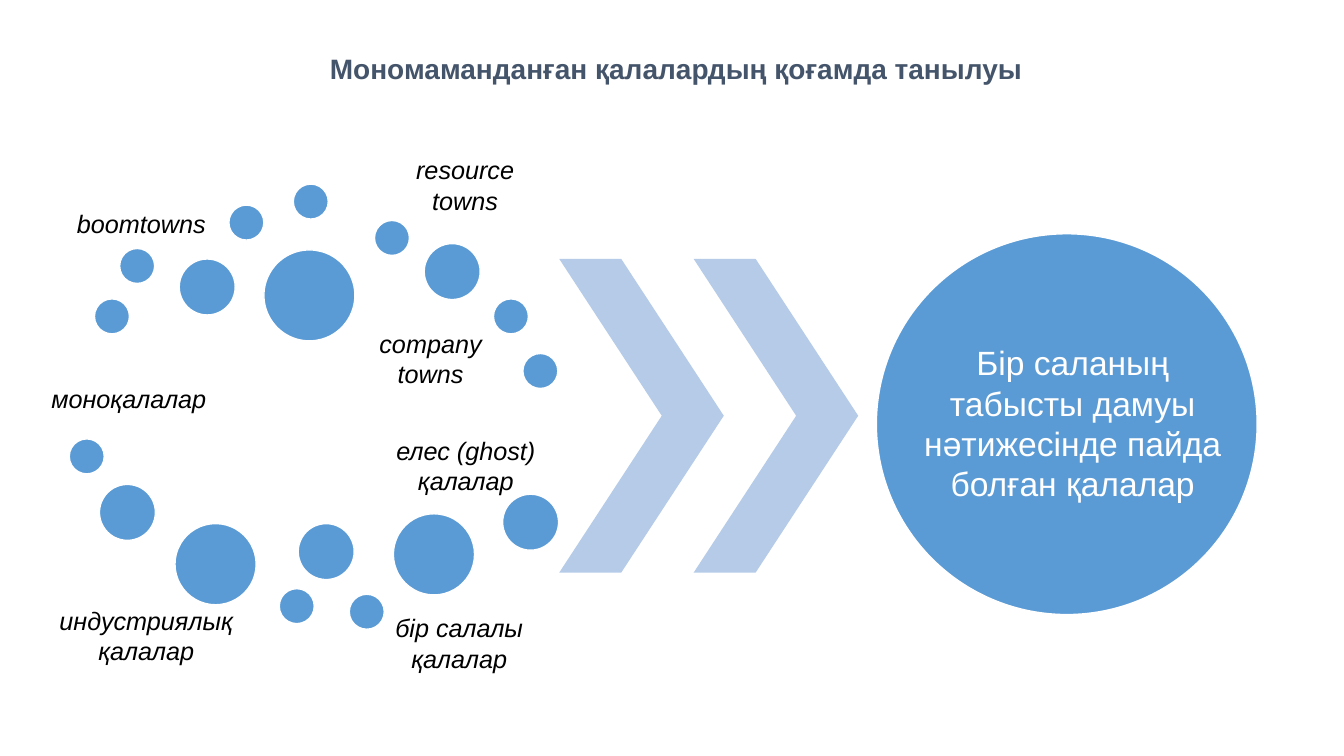
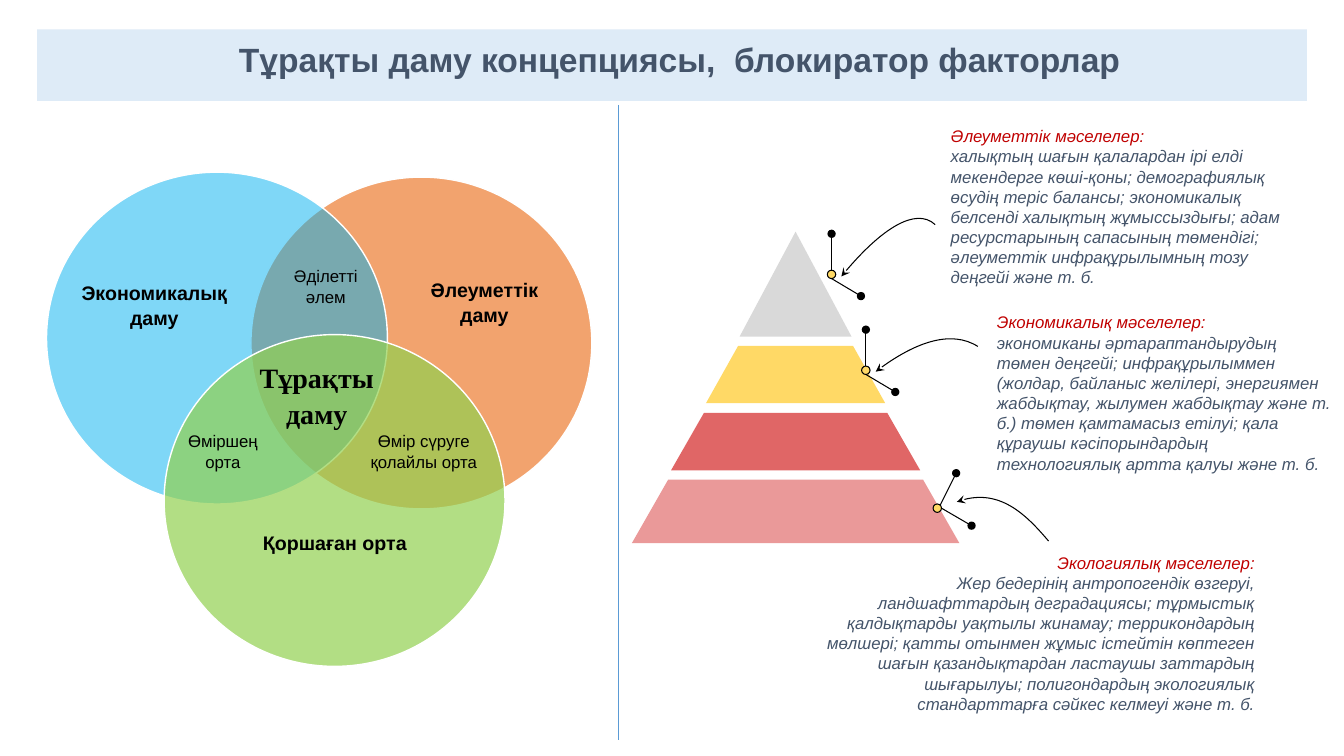
from lxml.etree import SubElement
from pptx import Presentation
from pptx.dml.color import RGBColor
from pptx.enum.shapes import MSO_CONNECTOR, MSO_SHAPE
from pptx.enum.text import MSO_ANCHOR, MSO_AUTO_SIZE, PP_ALIGN
from pptx.oxml.ns import qn
from pptx.util import Pt

COLORS = {
    "heading": "44546A", "band": "DEEBF7", "blue": "5B9BD5", "chevron": "B5CBE7",
    "white": "FFFFFF", "black": "000000", "issue": "C00000",
    "economy": "00B0F0", "society": "ED7D31", "nature": "92D050",
    "peak": "D9D9D9", "yellow": "FFD966", "red": "E06666", "pink": "EA9999",
}
TITLE_ONLY = 5


def rgb(name):
    return RGBColor.from_string(COLORS[name])


def write_text(frame, *lines, size=18, colors=("black",), font="Arial", bold=False,
               italic=False, align=PP_ALIGN.CENTER, spacing=None):
    """Write one paragraph per line; colors holds one colour for each line."""
    frame.word_wrap = True
    frame.auto_size = MSO_AUTO_SIZE.NONE
    for index, (line, color) in enumerate(zip(lines, colors)):
        paragraph = frame.add_paragraph() if index else frame.paragraphs[0]
        paragraph.alignment = align
        paragraph.line_spacing = spacing
        run = paragraph.add_run()
        run.text = line
        run.font.name = font
        run.font.size = Pt(size)
        run.font.bold = bold
        run.font.italic = italic
        run.font.color.rgb = rgb(color)


class Deck:
    def __init__(self):
        self.presentation = Presentation()
        self.presentation.slide_width = Pt(960)
        self.presentation.slide_height = Pt(540)
        self.shapes = None

    def add_slide(self, heading, box, size, band=None, insets=(0, 0, 0, 0)):
        layout = self.presentation.slide_layouts[TITLE_ONLY]
        self.shapes = self.presentation.slides.add_slide(layout).shapes
        title = self.shapes.title
        title.left, title.top, title.width, title.height = map(Pt, box)
        frame = title.text_frame
        frame.vertical_anchor = MSO_ANCHOR.MIDDLE
        (frame.margin_left, frame.margin_top,
         frame.margin_right, frame.margin_bottom) = map(Pt, insets)
        write_text(frame, heading, size=size, colors=("heading",), bold=True)
        if band:
            title.fill.solid()
            title.fill.fore_color.rgb = rgb(band)

    def paint(self, shape, fill, outline=None, line_width=1, opacity=100):
        shape.shadow.inherit = False
        shape.fill.solid()
        shape.fill.fore_color.rgb = rgb(fill)
        if opacity < 100:
            color = next(shape._element.spPr.iter(qn("a:srgbClr")))
            SubElement(color, qn("a:alpha"), val=str(opacity * 1000))
        if outline:
            shape.line.color.rgb = rgb(outline)
            shape.line.width = Pt(line_width)
        else:
            shape.line.fill.background()

    def ellipse(self, center, width, height, fill, outline="white", **style):
        x, y = center
        shape = self.shapes.add_shape(MSO_SHAPE.OVAL, Pt(x - width / 2), Pt(y - height / 2),
                                      Pt(width), Pt(height))
        self.paint(shape, fill, outline, **style)

    def chevron(self, left, top, width, height, point):
        shape = self.shapes.add_shape(MSO_SHAPE.CHEVRON, *map(Pt, (left, top, width, height)))
        shape.adjustments[0] = point
        self.paint(shape, "chevron")

    def text(self, box, *lines, **style):
        write_text(self.shapes.add_textbox(*map(Pt, box)).text_frame, *lines, **style)

    def outline(self, points, close):
        (x, y), *rest = [tuple(map(Pt, point)) for point in points]
        builder = self.shapes.build_freeform(x, y)
        builder.add_line_segments(rest, close=close)
        return builder.convert_to_shape()

    def polygon(self, points, fill):
        self.paint(self.outline(points, True), fill)

    def stroke(self, shape, color, width, tail):
        shape.line.color.rgb = rgb(color)
        shape.line.width = Pt(width)
        if tail:
            SubElement(shape._element.spPr.find(qn("a:ln")), qn("a:tailEnd"), type=tail)

    def line(self, start, end, color="black", width=0.75, tail=None):
        connector = self.shapes.add_connector(MSO_CONNECTOR.STRAIGHT, *map(Pt, (*start, *end)))
        self.stroke(connector, color, width, tail)
        SubElement(connector._element.spPr, qn("a:effectLst"))

    def curved_arrow(self, points):
        """Turn start, two control points and end into one Bezier curve."""
        arrow = self.outline(points, False)
        arrow.shadow.inherit = False
        arrow.fill.background()
        self.stroke(arrow, "black", 0.75, "stealth")
        contour = next(arrow._element.iter(qn("a:path")))
        segments = contour.findall(qn("a:lnTo"))
        curve = SubElement(contour, qn("a:cubicBezTo"))
        for segment in segments:
            curve.append(segment[0])
            contour.remove(segment)

    def pin(self, center, whiskers):
        x, y = center
        for (start_x, start_y), (end_x, end_y) in whiskers:
            self.line((x + start_x, y + start_y), (x + end_x, y + end_y), tail="oval")
        self.ellipse(center, 6, 6, "yellow", "black", line_width=0.75)


def build_recognition(deck):
    deck.add_slide("Мономаманданған қалалардың қоғамда танылуы", (104.5, 33, 757, 32), 20)

    # Dots: diameter and centres
    dots = {
        25: [(80, 226), (98, 190), (176, 159), (222, 144), (280, 170), (365, 226),
             (386, 265), (62, 326), (212, 433), (262, 437)],
        40: [(148, 205), (323, 194), (91, 366), (233, 394), (379, 373)],
        58: [(154, 403), (310, 396)],
        65: [(221, 211)],
    }
    for diameter, centers in dots.items():
        for center in centers:
            deck.ellipse(center, diameter, diameter, "blue")

    # Chevrons leading to the conclusion
    for left in (399.5, 495.5):
        deck.chevron(left, 185, 117.5, 224, 0.623)
    deck.ellipse((762, 303), 272, 272, "blue")
    deck.text((646, 241, 240.5, 124),
              "Бір саланың табысты дамуы нәтижесінде пайда болған қалалар",
              size=24, colors=("white",))

    # Town types
    town_types = [
        ("елес (ghost) қалалар", 265, 307.5, 135.5, 51),
        ("индустриялық қалалар", 30, 429, 149, 51),
        ("моноқалалар", 21, 270, 142, 29),
        ("boomtowns", 30, 145.5, 142, 29),
        ("resource towns", 273.5, 107, 117.5, 51),
        ("бір салалы қалалар", 273.5, 434, 109, 51),
        ("company towns", 247, 231, 121, 51),
    ]
    for town_type, *box in town_types:
        deck.text(box, town_type, italic=True)


def build_sustainability(deck):
    deck.add_slide("Тұрақты даму концепциясы,  блокиратор факторлар",
                   (26.5, 21, 907, 51), 24, band="band", insets=(11, 0, 0, 8))

    # Pyramid: top, bottom, half widths at both, colour
    axis = 568.3
    levels = [
        (165.5, 240.5, 0, 40, "peak"),
        (247, 288, 41, 64, "yellow"),
        (295, 336, 65.5, 89, "red"),
        (342.5, 388, 91, 117, "pink"),
    ]
    for top, bottom, half_top, half_bottom, color in levels:
        deck.polygon([(axis - half_top, top), (axis - half_bottom, bottom),
                      (axis + half_bottom, bottom), (axis + half_top, top)], color)

    # Issues: pin, arrow and explanation for each
    upright = [((0, -3), (0, -29)), ((0, 3), (21, 15.5))]
    slanted = [((2, -2), (13.5, -25)), ((3, 0), (24.5, 12.5))]
    issues = [
        ((594, 196), upright, [(668, 160.5), (654, 147.5), (627, 165.5), (601, 197.5)],
         (672, 86.5, 254, 124), PP_ALIGN.LEFT, "Әлеуметтік мәселелер:",
         "халықтың шағын қалалардан ірі елді мекендерге көші-қоны; демографиялық өсудің "
         "теріс балансы; экономикалық белсенді халықтың жұмыссыздығы; адам ресурстарының "
         "сапасының төмендігі; әлеуметтік инфрақұрылымның тозу деңгейі және т. б."),
        ((618.5, 264.5), upright, [(698.5, 247.5), (679.5, 235.5), (651.5, 245.5), (625.5, 265.5)],
         (705, 219.5, 253, 124), PP_ALIGN.LEFT, "Экономикалық мәселелер:",
         "экономиканы әртараптандырудың төмен деңгейі; инфрақұрылыммен (жолдар, байланыс "
         "желілері, энергиямен жабдықтау, жылумен жабдықтау және т. б.) төмен қамтамасыз "
         "етілуі; қала құраушы кәсіпорындардың технологиялық артта қалуы және т. б."),
        ((669.5, 363), slanted, [(749, 386.5), (734.5, 369.5), (713.5, 347), (683.5, 358.5)],
         (580.5, 391, 323, 124), PP_ALIGN.RIGHT, "Экологиялық мәселелер:",
         "Жер бедерінің антропогендік өзгеруі, ландшафттардың деградациясы; тұрмыстық "
         "қалдықтарды уақтылы жинамау; террикондардың мөлшері; қатты отынмен жұмыс істейтін "
         "көптеген шағын қазандықтардан ластаушы заттардың шығарылуы; полигондардың "
         "экологиялық стандарттарға сәйкес келмеуі және т. б."),
    ]
    for center, whiskers, curve, box, align, issue, details in issues:
        deck.pin(center, whiskers)
        deck.curved_arrow(curve)
        deck.text(box, issue, details, size=12, colors=("issue", "heading"),
                  italic=True, align=align)

    # Divider between the halves
    deck.line((441.5, 75), (441.5, 528.5), "blue", 0.5)

    # Venn diagram
    for center, sphere, opacity in [((301, 245), "society", 70), ((155, 241.5), "economy", 50),
                                    ((239, 357.5), "nature", 70)]:
        deck.ellipse(center, 243.5, 237, sphere, opacity=opacity)

    overlap = {"size": 12}
    domain = {"size": 14, "bold": True}
    core = {"size": 20, "bold": True, "font": "Times New Roman"}
    venn_labels = [
        ("Өмір сүруге қолайлы орта", (256, 303, 93.5, 50.5), overlap),
        ("Өміршең орта", (117.5, 303, 83.5, 50.5), overlap),
        ("Әділетті әлем", (196, 185, 73.5, 50.5), overlap),
        ("Қоршаған орта", (152.5, 374.5, 173.5, 57.5), domain),
        ("Әлеуметтік даму", (281.5, 193.5, 129, 58), domain),
        ("Экономикалық даму", (40.5, 196, 139.5, 51), domain),
        ("Тұрақты даму", (171.5, 252, 109.5, 56), core),
    ]
    for label, box, style in venn_labels:
        deck.text(box, label, spacing=1.07, **style)


def main():
    deck = Deck()
    build_recognition(deck)
    build_sustainability(deck)
    deck.presentation.save("out.pptx")


if __name__ == "__main__":
    main()
